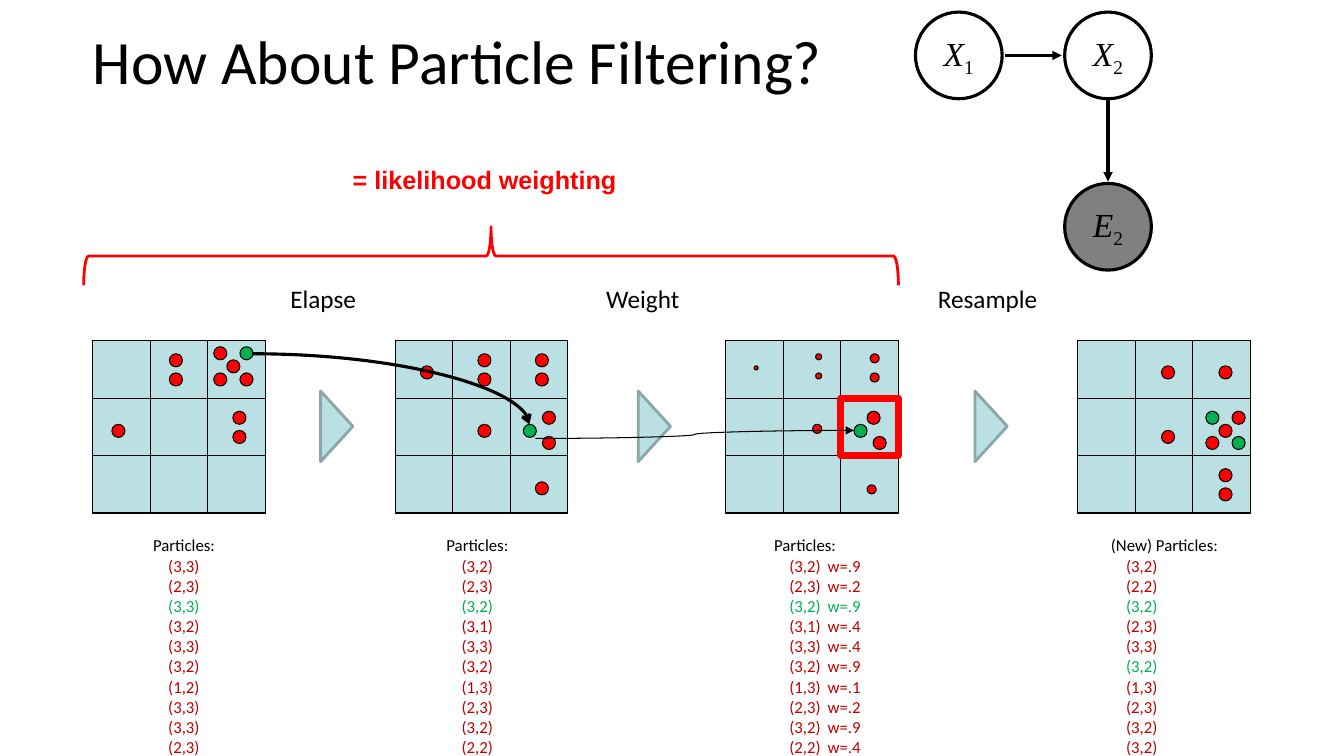
from itertools import product

from lxml.etree import SubElement
from pptx import Presentation
from pptx.dml.color import RGBColor
from pptx.enum.shapes import MSO_CONNECTOR, MSO_SHAPE
from pptx.enum.text import MSO_ANCHOR, PP_ALIGN
from pptx.oxml.ns import qn
from pptx.util import Pt

PX = 9144
COLORS = {
    "ink": "000000",
    "paper": "FFFFFF",
    "cell": "BBE0E3",
    "edge": "8AA6A8",
    "red": "FF0000",
    "green": "00B050",
    "sample": "C00000",
    "evidence": "808080",
}
CELL = 57
GRID_TOP = 338
DOT = 13
TAB_STOPS = (15, 53)

STAGES = [
    {
        "grid": 92, "list": 142, "heading": "Particles:",
        "red": [(76, 13), (76, 32), (120, 6), (120, 32), (133, 19), (146, 32),
                (139, 70), (139, 89), (19, 83)],
        "green": [(146, 6)],
        "samples": ["(3,3)", "(2,3)", "(3,3)", "(3,2)", "(3,3)",
                    "(3,2)", "(1,2)", "(3,3)", "(3,3)", "(2,3)"],
        "tracked": [2],
    },
    {
        "grid": 392, "list": 433, "heading": "Particles:",
        "red": [(25, 25), (82, 13), (82, 32), (139, 13), (139, 32), (82, 83),
                (146, 70), (146, 95), (139, 140)],
        "green": [(127, 83)],
        "samples": ["(3,2)", "(2,3)", "(3,2)", "(3,1)", "(3,3)",
                    "(3,2)", "(1,3)", "(2,3)", "(3,2)", "(2,2)"],
        "tracked": [2],
    },
    {
        "grid": 720, "list": 758, "heading": "Particles:",
        "red": [(28, 25, 4), (89, 13, 6), (89, 32, 6), (143, 13, 9), (143, 32, 9),
                (86, 83, 9), (140, 143, 9), (140, 70), (146, 95)],
        "green": [(127, 83)],
        "samples": ["(3,2)\tw=.9", "(2,3)\tw=.2", "(3,2)\tw=.9", "(3,1)\tw=.4",
                    "(3,3)\tw=.4", "(3,2)\tw=.9", "(1,3)\tw=.1", "(2,3)\tw=.2",
                    "(3,2)\tw=.9", "(2,2)\tw=.4"],
        "tracked": [2],
    },
    {
        "grid": 1069, "list": 1092, "heading": "(New) Particles:",
        "red": [(83, 25), (140, 25), (83, 89), (153, 70), (140, 83), (127, 95),
                (140, 127), (140, 146)],
        "green": [(127, 70), (153, 95)],
        "samples": ["(3,2)", "(2,2)", "(3,2)", "(2,3)", "(3,3)",
                    "(3,2)", "(1,3)", "(2,3)", "(3,2)", "(3,2)"],
        "tracked": [2, 5],
    },
]
STEPS = [("Elapse", 233, 318), ("Weight", 550, 633), ("Resample", 892, 967)]


def color(name):
    return RGBColor.from_string(COLORS[name])


def emu(*lengths):
    return [length * PX for length in lengths]


def add_outline(parent, kind, bounds, fill, line="ink", weight=0.75, rotation=0):
    shape = parent.shapes.add_shape(kind, *emu(*bounds))
    shape.shadow.inherit = False
    shape.rotation = rotation
    if fill:
        shape.fill.solid()
        shape.fill.fore_color.rgb = color(fill)
    else:
        shape.fill.background()
    shape.line.color.rgb = color(line)
    shape.line.width = Pt(weight)
    return shape


def add_span(para, text, size, shade="ink", font="Calibri"):
    span = para.add_run()
    span.text = text
    span.font.size = Pt(size)
    span.font.name = font
    span.font.color.rgb = color(shade)
    return span


def add_box(page, bounds):
    box = page.shapes.add_textbox(*emu(*bounds))
    box.text_frame.word_wrap = True
    return box.text_frame


def add_arrow(page, start, end, weight, head="triangle", preset="line"):
    kind = MSO_CONNECTOR.STRAIGHT if preset == "line" else MSO_CONNECTOR.CURVE
    arrow = page.shapes.add_connector(kind, *emu(*start, *end))
    arrow.line.color.rgb = color("ink")
    arrow.line.width = Pt(weight)
    properties = arrow._element.spPr
    properties.find(qn("a:prstGeom")).set("prst", preset)
    SubElement(properties.find(qn("a:ln")), qn("a:tailEnd"), type=head)
    SubElement(properties, qn("a:effectLst"))


def add_grid(page, stage):
    grid = page.shapes.add_group_shape()
    left = stage["grid"]
    for row, column in product(range(3), repeat=2):
        bounds = (left + column * CELL, GRID_TOP + row * CELL, CELL, CELL)
        add_outline(grid, MSO_SHAPE.RECTANGLE, bounds, "cell")
    for shade in ("red", "green"):
        for x, y, *weighted in stage[shade]:
            size = weighted[0] if weighted else DOT
            bounds = (left + x, GRID_TOP + y, size, size)
            add_outline(grid, MSO_SHAPE.OVAL, bounds, shade)


def add_particle_list(page, stage):
    frame = add_box(page, (stage["list"], 526, 150, 232))
    add_span(frame.paragraphs[0], stage["heading"], 12)
    for index, sample in enumerate(stage["samples"]):
        para = frame.add_paragraph()
        stops = SubElement(para._p.get_or_add_pPr(), qn("a:tabLst"))
        for stop in TAB_STOPS:
            SubElement(stops, qn("a:tab"), pos=str(stop * PX), algn="l")
        shade = "green" if index in stage["tracked"] else "sample"
        add_span(para, "\t" + sample, 12, shade)


def add_step(page, name, label_left, marker_left):
    para = add_box(page, (label_left, 276, 175, 40)).paragraphs[0]
    para.alignment = PP_ALIGN.CENTER
    add_span(para, name, 18)
    bounds = (marker_left - 19, 407, 70, 32)
    add_outline(page, MSO_SHAPE.ISOSCELES_TRIANGLE, bounds, "cell", "edge", 2, 90)


def add_node(page, left, top, letter, subscript, fill="paper"):
    node = add_outline(page, MSO_SHAPE.OVAL, (left, top, 86, 86), fill, weight=2.25)
    frame = node.text_frame
    frame.word_wrap = False
    frame.vertical_anchor = MSO_ANCHOR.MIDDLE
    para = frame.paragraphs[0]
    para.alignment = PP_ALIGN.CENTER
    add_span(para, letter, 24, font="Times New Roman").font.italic = True
    index = add_span(para, subscript, 24, font="Times New Roman")
    index.font._element.set("baseline", "-25000")


def add_title(page, text):
    title = page.shapes.title
    title.left, title.top, title.width, title.height = emu(0, -3, 908, 125)
    title.text_frame.vertical_anchor = MSO_ANCHOR.MIDDLE
    para = title.text_frame.paragraphs[0]
    para.alignment = PP_ALIGN.CENTER
    add_span(para, text, 44)


def main():
    deck = Presentation()
    deck.slide_width, deck.slide_height = emu(1333, 750)
    page = deck.slides.add_slide(deck.slide_layouts[5])
    add_title(page, "How About Particle Filtering?")

    for stage in STAGES:
        add_grid(page, stage)
        add_particle_list(page, stage)
    for step in STEPS:
        add_step(page, *step)

    highlight = (STAGES[2]["grid"] + 2 * CELL, GRID_TOP + CELL, CELL, CELL)
    add_outline(page, MSO_SHAPE.RECTANGLE, highlight, None, "red", 5)
    add_arrow(page, (250, 351), (525, 421), 2.25, "arrow", "curvedConnector2")
    add_arrow(page, (531, 435), (847, 427), 0.75, preset="curvedConnector3")

    add_node(page, 908, 12, "X", "1")
    add_node(page, 1056, 12, "X", "2")
    add_node(page, 1056, 182, "E", "2", "evidence")
    add_arrow(page, (997, 55), (1053, 55), 2.25)
    add_arrow(page, (1099, 99), (1099, 180), 2.25)

    add_outline(page, MSO_SHAPE.LEFT_BRACE, (458, -150, 58, 808), None, "red", 2, 90)
    para = add_box(page, (340, 158, 290, 40)).paragraphs[0]
    add_span(para, "= likelihood weighting", 18, "red", "Arial").font.bold = True

    deck.save("out.pptx")


if __name__ == "__main__":
    main()
